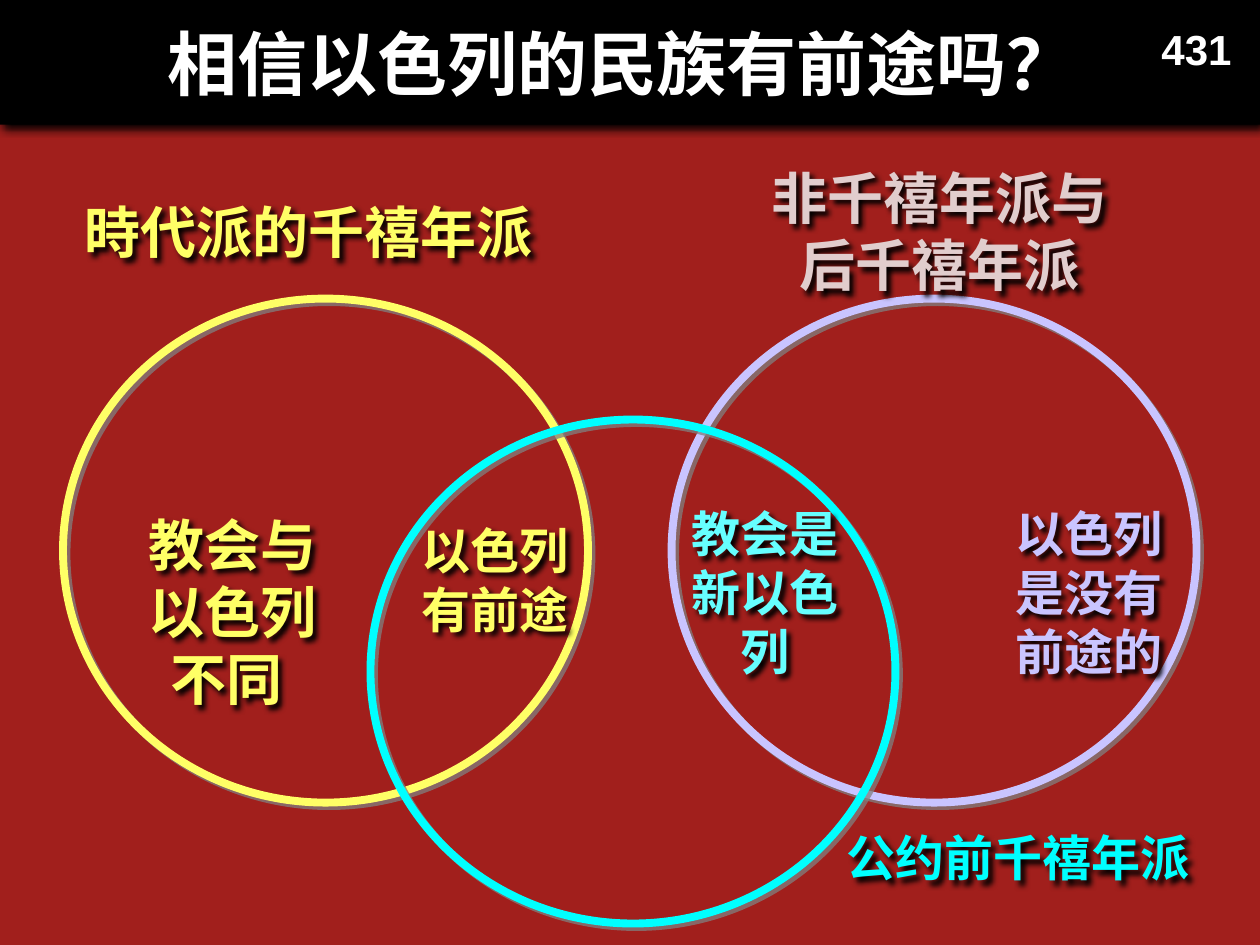
from lxml.etree import SubElement as Sub
from pptx import Presentation
from pptx.dml.color import RGBColor as RGB
from pptx.enum.shapes import MSO_SHAPE as Shape
from pptx.enum.text import MSO_ANCHOR as Anchor, MSO_AUTO_SIZE as Fit, PP_ALIGN as Align
from pptx.oxml.ns import qn
from pptx.util import Pt

HEX = {
    "back": "A11F1C", "black": "000000", "white": "FFFFFF", "gray": "808080",
    "yellow": "FFFF66", "lilac": "C9C4FF", "pink": "E1CDCD",
    "cyan": "00FFFF", "aqua": "66FFFF",
}
SANS, LATIN = "Noto Sans CJK SC", "Arial"
MID, LEFT = Align.CENTER, Align.LEFT

TITLE = "相信以色列的民族有前途吗？ "
PAGE = "431"
SIZE = (300, 288)
RINGS = [  # left, top, colour
    (36, 170.64, "yellow"),
    (383.76, 170.64, "lilac"),
    (211.68, 239.76, "cyan"),
]
LABELS = [  # box, colour, size, alignment, paragraphs
    ((36, 109.44, 288, 46), "yellow", 32, MID, ["時代派的千禧年派 "]),
    ((234, 293.76, 103.68, 104.4), "yellow", 28, LEFT, ["以色列有前途"]),
    ((414, 90, 246.24, 85), "pink", 32, MID, ["非千禧年派与", "后千禧年派"]),
    ((570.24, 284.4, 103.68, 108.7), "lilac", 28, MID, ["以色列是没有前途的 "]),
    ((468, 469.44, 234, 41), "cyan", 28, MID, ["公约前千禧年派 "]),
    ((385.2, 284.4, 103.68, 108.7), "aqua", 28, MID, ["教会是新以色列"]),
    ((72, 288, 121.68, 123.84), "yellow", 32, MID, ["教会与以色列不同 "]),
]


def color(name):
    return RGB.from_string(HEX[name])


def shade(shape, name, alpha, blur, dist):
    """Give the shape an outer shadow towards the lower right."""
    shape.shadow.inherit = False
    fx = shape.element.spPr.find(qn("a:effectLst"))
    out = Sub(fx, qn("a:outerShdw"), blurRad=str(Pt(blur)), dist=str(Pt(dist)),
              dir="2700000", algn="ctr", rotWithShape="0")
    tint = Sub(out, qn("a:srgbClr"), val=HEX[name])
    Sub(tint, qn("a:alpha"), val=str(alpha * 1000))


def write(frame, lines, size, name, align, face=SANS):
    for i, line in enumerate(lines):
        para = frame.add_paragraph() if i else frame.paragraphs[0]
        para.alignment = align
        run = para.add_run()
        run.text = line
        font = run.font
        font.size, font.bold, font.name = Pt(size), True, face
        font.color.rgb = color(name)
        Sub(run._r.get_or_add_rPr(), qn("a:ea"), typeface=face)


def add_box(slide, box, wrap=True):
    text = slide.shapes.add_textbox(*map(Pt, box))
    text.text_frame.word_wrap = wrap
    text.text_frame.auto_size = Fit.SHAPE_TO_FIT_TEXT
    return text


def add_title(slide):
    title = slide.shapes.title
    title.left, title.top, title.width, title.height = map(Pt, (0, 0, 720, 71.28))
    title.fill.solid()
    title.fill.fore_color.rgb = color("black")
    shade(title, "black", 100, 5, 3)
    frame = title.text_frame
    frame.auto_size, frame.vertical_anchor = Fit.NONE, Anchor.MIDDLE
    write(frame, [TITLE], 40, "white", MID)


def add_ring(slide, left, top, name):
    ring = slide.shapes.add_shape(Shape.OVAL, *map(Pt, (left, top, *SIZE)))
    ring.fill.background()
    ring.line.color.rgb = color(name)
    ring.line.width = Pt(4.5)
    shade(ring, "gray", 75, 0, 2.8)


def main():
    deck = Presentation()
    deck.slide_width, deck.slide_height = Pt(720), Pt(540)
    slide = deck.slides.add_slide(deck.slide_layouts[5])
    slide.background.fill.solid()
    slide.background.fill.fore_color.rgb = color("back")
    add_title(slide)
    for ring in RINGS:
        add_ring(slide, *ring)
    for box, name, size, align, lines in LABELS:
        label = add_box(slide, box)
        shade(label, "black", 100, 3, 3)
        write(label.text_frame, lines, size, name, align)
    page = add_box(slide, (656.64, 10.08, 54.72, 36), wrap=False)
    write(page.text_frame, [PAGE], 24, "white", LEFT, LATIN)
    deck.save("out.pptx")


if __name__ == "__main__":
    main()
